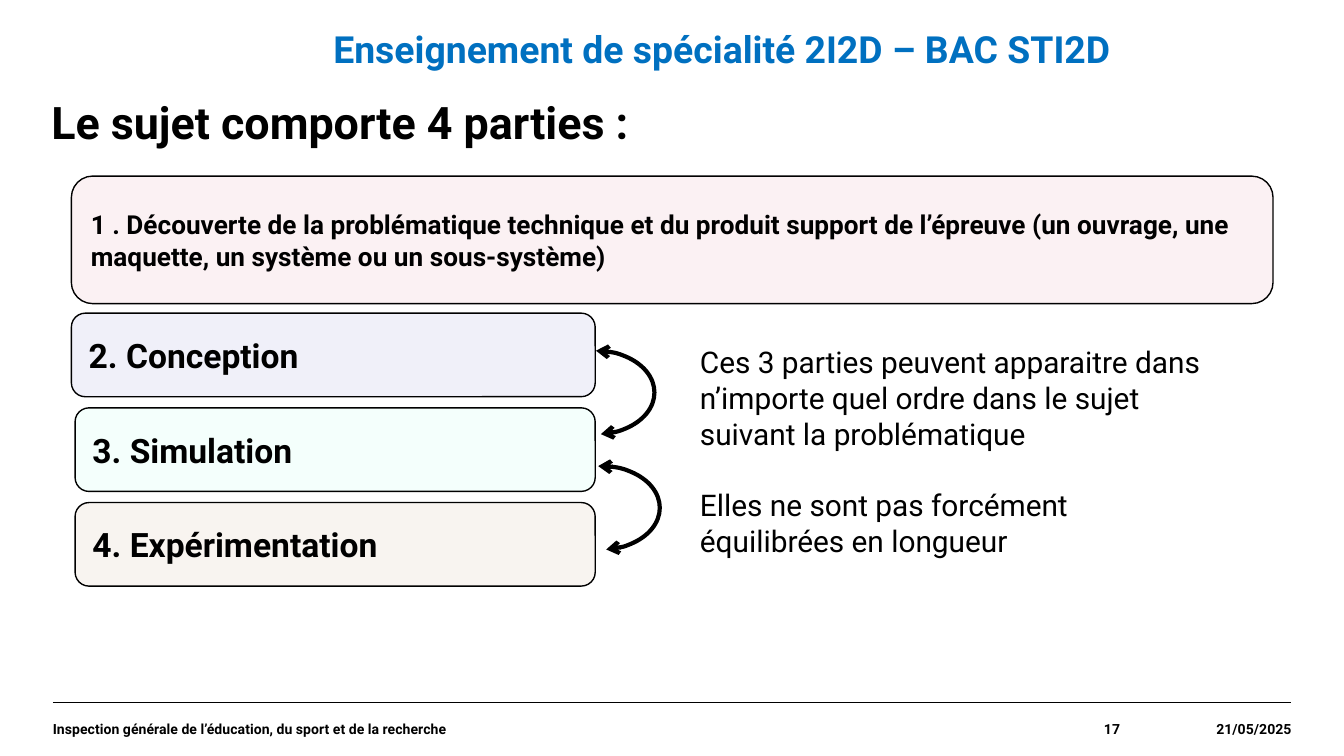
from pptx import Presentation
from pptx.dml.color import RGBColor
from pptx.enum.shapes import MSO_CONNECTOR, MSO_SHAPE
from pptx.enum.text import MSO_ANCHOR, PP_ALIGN
from pptx.oxml.ns import qn
from pptx.util import Cm, Pt
from lxml import etree

LEFT, RIGHT = PP_ALIGN.LEFT, PP_ALIGN.RIGHT
TOP, MIDDLE = MSO_ANCHOR.TOP, MSO_ANCHOR.MIDDLE
ROUNDED, ARC = MSO_SHAPE.ROUNDED_RECTANGLE, MSO_SHAPE.ARC
STRAIGHT = MSO_CONNECTOR.STRAIGHT

THEME = {
    "font": "Roboto",
    "black": RGBColor.from_string("000000"),
    "blue": RGBColor.from_string("0070C0"),
    "alpha": 25,
    "title": 24,
    "header": 20,
    "part": 18,
    "note": 16,
    "intro": 14,
    "footer": 7.5,
}

TITLE = "Le sujet comporte 4 parties :"
HEADER = "Enseignement de spécialité 2I2D – BAC STI2D"
INTRO = (
    "1 . Découverte de la problématique technique et du produit support de l’épreuve "
    "(un ouvrage, une maquette, un système ou un sous-système)"
)
PARTS = [
    ("2. Conception", "C6C6EA", 1.35),
    ("3. Simulation", "D5FFF4", 1.42),
    ("4. Expérimentation", "E7D4C6", 1.42),
]
NOTES = [
    "Ces 3 parties peuvent apparaitre dans n’importe quel ordre dans le sujet suivant la problématique",
    "Elles ne sont pas forcément équilibrées en longueur",
]
FOOTER = [
    ("Inspection générale de l’éducation, du sport et de la recherche", 16.41, LEFT),
    ("17", 3.76, RIGHT),
    ("21/05/2025", 3.24, RIGHT),
]
ARCS = [(10.16, 6.63, 162), (10.26, 8.81, 159.44)]

MARGIN, FOOTER_TOP, LINE_END = 1, 13.28, 24.4
PARTS_TOP, PARTS_RIGHT, PART_HEIGHT, PART_PITCH = 5.92, 11.25, 1.58, 1.79


def lengths(*values):
    return [Cm(value) for value in values]


def write(shape, texts, size, bold=True, color="black", align=LEFT, anchor=TOP, inset=None, gap=0, spacing=None):
    frame = shape.text_frame
    frame.word_wrap = True
    frame.vertical_anchor = anchor
    if inset is not None:
        for side in ("left", "top", "right", "bottom"):
            setattr(frame, f"margin_{side}", Cm(inset))
    font_format = {"name": THEME["font"], "size": Pt(THEME[size]), "bold": bold}
    for index, text in enumerate(texts):
        paragraph = frame.add_paragraph() if index else frame.paragraphs[0]
        paragraph.text = text
        paragraph.alignment = align
        paragraph.line_spacing = spacing
        if index:
            paragraph.space_before = Pt(gap)
        for name, value in font_format.items():
            setattr(paragraph.font, name, value)
        paragraph.font.color.rgb = THEME[color]


def add_text(slide, box, texts, size, **options):
    write(slide.shapes.add_textbox(*lengths(*box)), texts, size, **options)


def outline(shape, width):
    shape.line.color.rgb = THEME["black"]
    shape.line.width = Pt(width)


def add_part(slide, box, text, size, fill):
    shape = slide.shapes.add_shape(ROUNDED, *lengths(*box))
    shape.shadow.inherit = False
    shape.fill.solid()
    shape.fill.fore_color.rgb = RGBColor.from_string(fill)
    color = shape._element.spPr.find(".//" + qn("a:srgbClr"))
    etree.SubElement(color, qn("a:alpha"), val=str(THEME["alpha"] * 1000))
    outline(shape, 0.75)
    write(shape, [text], size, anchor=MIDDLE)


def add_double_arrow(slide, left, top, start):
    shape = slide.shapes.add_shape(ARC, *lengths(left, top, 2.21, 1.58))
    shape.shadow.inherit = False
    shape.fill.background()
    shape.adjustments[0] = start
    shape.adjustments[1] = 49.97
    outline(shape, 2.25)
    line = shape.line._get_or_add_ln()
    for end in ("a:headEnd", "a:tailEnd"):
        etree.SubElement(line, qn(end), type="arrow")


def add_footer(slide):
    rule = slide.shapes.add_connector(STRAIGHT, *lengths(MARGIN, FOOTER_TOP, LINE_END, FOOTER_TOP))
    outline(rule, 0.8)
    etree.SubElement(rule._element.spPr, qn("a:effectLst"))
    left = MARGIN
    for text, width, align in FOOTER:
        add_text(slide, (left, FOOTER_TOP, width, 1), [text], "footer", align=align, anchor=MIDDLE, inset=0)
        left += width


def main():
    presentation = Presentation()
    presentation.slide_width, presentation.slide_height = lengths(25.4, 14.29)
    slide = presentation.slides.add_slide(presentation.slide_layouts[6])

    add_footer(slide)
    add_text(slide, (0.97, 1.9, 23.4, 1), [TITLE], "title", inset=0, spacing=0.9)
    add_text(slide, (6.3, 0.5, 15.8, 1), [HEADER], "header", color="blue", inset=0)
    add_part(slide, (1.35, 3.33, 22.71, 2.41), INTRO, "intro", "F2C9D1")
    for index, (text, fill, left) in enumerate(PARTS):
        top = PARTS_TOP + index * PART_PITCH
        add_part(slide, (left, top, PARTS_RIGHT - left, PART_HEIGHT), text, "part", fill)
    for left, top, start in ARCS:
        add_double_arrow(slide, left, top, start)
    add_text(slide, (12.98, 6.38, 10.03, 4.37), NOTES, "note", bold=False, gap=19)

    presentation.save("out.pptx")


if __name__ == "__main__":
    main()
